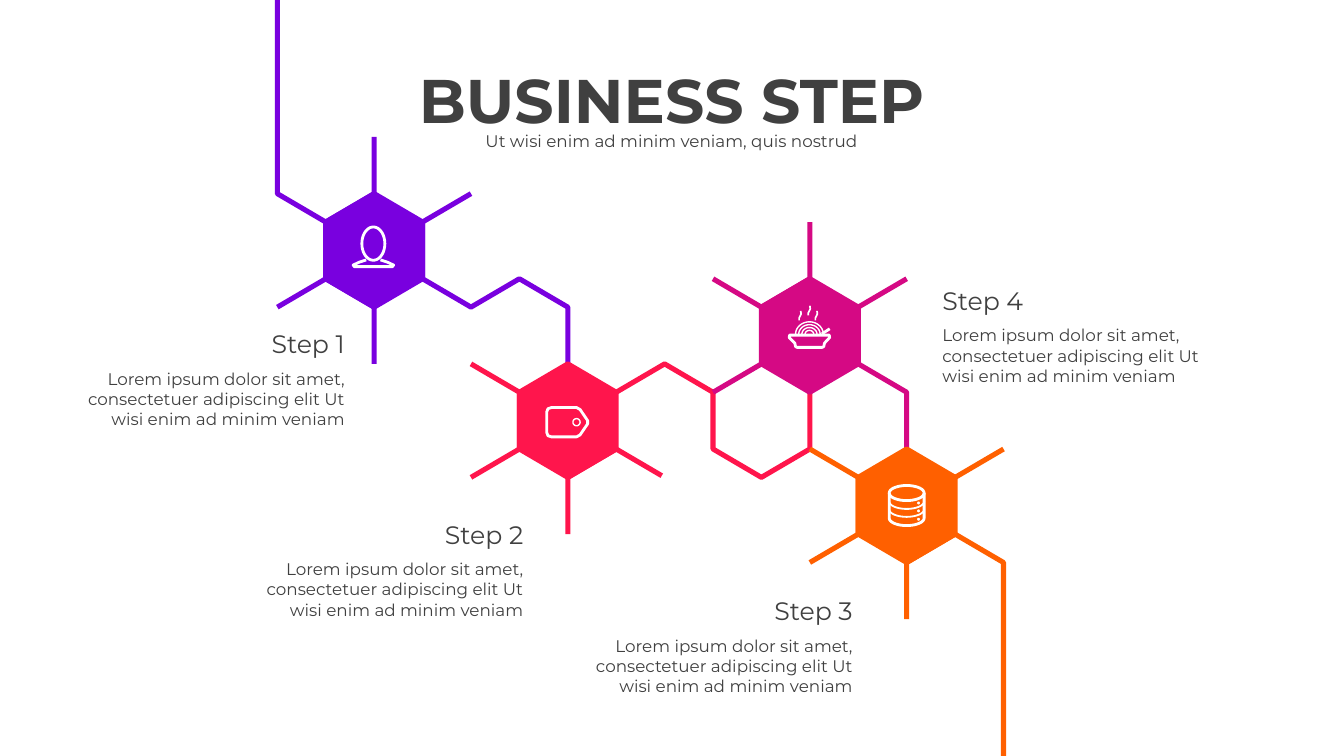
from dataclasses import dataclass
from math import cos, pi, sin
from typing import Optional

from lxml import etree
from pptx import Presentation
from pptx.dml.color import RGBColor
from pptx.enum.shapes import MSO_CONNECTOR
from pptx.enum.text import MSO_ANCHOR, PP_ALIGN
from pptx.oxml.ns import qn
from pptx.util import Cm, Pt

LEFT, CENTER, RIGHT = PP_ALIGN.LEFT, PP_ALIGN.CENTER, PP_ALIGN.RIGHT
TOP, MIDDLE = MSO_ANCHOR.TOP, MSO_ANCHOR.MIDDLE
STRAIGHT = MSO_CONNECTOR.STRAIGHT

FONT = "Montserrat"
COLORS = {"violet": "7900DF", "red": "FF154C", "magenta": "D50984",
          "orange": "FF6000", "white": "FFFFFF", "text": "404040"}
LOREM = ("Lorem ipsum dolor sit amet, consectetuer adipiscing elit "
         "Ut wisi enim ad minim veniam")

# Honeycomb lattice in cm: every corner sits on a whole column and row
SLIDE_W, SLIDE_H = 33.87, 19.05
GRID_LEFT, GRID_TOP = 6.99, 4.88
COL, ROW = 1.22, 1.43 / 2
ROW_SLIDE_TOP = -GRID_TOP / ROW
ROW_SLIDE_BOTTOM = (SLIDE_H - GRID_TOP) / ROW
TRAIL_PT = 3.63

Points = list[tuple[float, float]]


@dataclass
class Stroke:
    """Icon line, in cm from the centre of its hexagon."""
    points: Points
    width: float = 2.0
    closed: bool = False
    fill: Optional[str] = None


@dataclass
class Step:
    title: str
    color: str
    center: tuple[int, int]
    trails: list[Points]
    icon: list[Stroke]
    text_left: float
    text_top: float
    align: PP_ALIGN = RIGHT


def arc(cx: float, cy: float, rx: float, ry: float,
        start: float = 0, end: float = 2 * pi, parts: int = 36) -> Points:
    angles = [start + (end - start) * i / parts for i in range(parts + 1)]
    return [(cx + rx * cos(a), cy + ry * sin(a)) for a in angles]


def rgb(name: str) -> RGBColor:
    return RGBColor.from_string(COLORS[name])


def node(point: tuple[float, float]) -> tuple[float, float]:
    """Turn a lattice column and row into cm."""
    return GRID_LEFT + point[0] * COL, GRID_TOP + point[1] * ROW


def add_path(shapes, points: Points, color: str, width: float,
             closed: bool = False, fill: Optional[str] = None) -> None:
    pts = [(Cm(x), Cm(y)) for x, y in points]
    if len(pts) == 2:
        sp = shapes.add_connector(STRAIGHT, *pts[0], *pts[1])
        etree.SubElement(sp._element.spPr, qn("a:effectLst"))
    else:
        builder = shapes.build_freeform(*pts[0], scale=1.0)
        builder.add_line_segments(pts[1:], close=closed)
        sp = builder.convert_to_shape()
        sp.shadow.inherit = False
        if fill:
            sp.fill.solid()
            sp.fill.fore_color.rgb = rgb(fill)
        else:
            sp.fill.background()
    sp.line.color.rgb = rgb(color)
    sp.line.width = Pt(width)


def add_text(shapes, text: str, left: float, top: float, width: float,
             height: float, size: float, align: PP_ALIGN,
             anchor: MSO_ANCHOR = TOP, bold: bool = False,
             spacing: float = 1.0) -> None:
    tf = shapes.add_textbox(Cm(left), Cm(top), Cm(width), Cm(height)).text_frame
    tf.word_wrap = True
    tf.vertical_anchor = anchor
    tf.text = text
    p = tf.paragraphs[0]
    p.alignment = align
    p.line_spacing = spacing
    font = p.runs[0].font
    font.name, font.size, font.bold = FONT, Pt(size), bold
    font.color.rgb = rgb("text")


def draw_step(shapes, step: Step) -> None:
    for trail in step.trails:
        add_path(shapes, [node(pt) for pt in trail], step.color, TRAIL_PT)

    c, r = step.center
    corners = [(c, r - 2), (c + 1, r - 1), (c + 1, r + 1),
               (c, r + 2), (c - 1, r + 1), (c - 1, r - 1)]
    add_path(shapes, [node(pt) for pt in corners], step.color, TRAIL_PT,
             closed=True, fill=step.color)

    cx, cy = node(step.center)
    for s in step.icon:
        add_path(shapes, [(cx + x, cy + y) for x, y in s.points],
                 "white", s.width, s.closed, s.fill)

    body_w, title_w = 7.01, 5.05
    indent = body_w - title_w if step.align == RIGHT else 0
    add_text(shapes, LOREM, step.text_left, step.text_top + 1.01,
             body_w, 1.8, 12, step.align)
    add_text(shapes, step.title, step.text_left + indent, step.text_top,
             title_w, 1.02, 18, step.align, MIDDLE)


PERSON = [
    Stroke(arc(-0.02, -0.17, 0.29, 0.42), closed=True),
    Stroke([(-0.2, 0.24), (-0.38, 0.3), (-0.53, 0.37), (-0.5, 0.41),
            (0.46, 0.41), (0.49, 0.37), (0.34, 0.3), (0.16, 0.24)]),
]
TAG = [
    Stroke([(-0.41, -0.33), (0.22, -0.33), (0.31, -0.28), (0.5, 0),
            (0.5, 0.08), (0.31, 0.36), (0.22, 0.41), (-0.41, 0.41),
            (-0.5, 0.38), (-0.53, 0.3), (-0.53, -0.22), (-0.5, -0.3)],
           closed=True),
    Stroke(arc(0.22, 0.04, 0.09, 0.09), 1, closed=True),
]
BOWL = [
    Stroke([(-0.51, -0.01), (-0.52, 0.05), (-0.38, 0.19), (-0.36, 0.28),
            (-0.32, 0.3), (0.31, 0.3), (0.35, 0.28), (0.37, 0.19),
            (0.5, 0.05), (0.49, -0.01)], closed=True),
    Stroke([(0.3, -0.04), (0.5, -0.17)]),
    *[Stroke(arc(-0.01, -0.03, radius, 0.9 * radius, pi, 2 * pi), 1)
      for radius in (0.35, 0.27, 0.19, 0.11)],
    *[Stroke([(x, y), (x, y - 0.06), (x + 0.05, y - 0.16),
              (x + 0.04, y - 0.24)], 1.2)
      for x, y in ((-0.27, -0.38), (-0.04, -0.51), (0.14, -0.38))],
]
DATABASE = [
    Stroke(arc(0, -0.32, 0.44, 0.19), closed=True),
    Stroke([(0.44, -0.32), *arc(0, 0.31, 0.44, 0.19, 0, pi), (-0.44, -0.32)]),
    *[Stroke(arc(0, y, 0.44, 0.19, 0, pi), 1.3) for y in (-0.11, 0.09)],
    *[Stroke(arc(0.3, y, 0.03, 0.03), 0.25, closed=True, fill="white")
      for y in (-0.07, 0.13, 0.34)],
]

STEPS = [
    Step("Step 1", "violet", (2, 2), [
        [(0, ROW_SLIDE_TOP), (0, 0), (1, 1), (2, 0), (2, -2)],
        [(4, 0), (3, 1), (3, 3), (4, 4), (5, 3), (6, 4), (6, 6)],
        [(0, 4), (1, 3), (2, 4), (2, 6)],
    ], PERSON, 1.93, 8.15),
    Step("Step 2", "red", (6, 8), [
        [(7, 7), (8, 6), (9, 7), (9, 9), (10, 10), (11, 9), (11, 7)],
        [(4, 6), (5, 7), (5, 9), (4, 10)],
        [(6, 12), (6, 10), (7, 9), (7.94, 9.94)],
    ], TAG, 6.43, 12.95),
    Step("Step 4", "magenta", (11, 5), [
        [(9, 7), (10, 6)],
        [(9, 3), (10, 4), (11, 3), (11, 1)],
        [(13, 3), (12, 4), (12, 6), (13, 7), (13, 9)],
    ], BOWL, 23.5, 7.06, LEFT),
    Step("Step 3", "orange", (13, 11), [
        [(11, 9), (12, 10), (12, 12), (11, 13)],
        [(13, 15), (13, 13), (14, 12), (15, 13), (15, ROW_SLIDE_BOTTOM)],
        [(14, 10), (15, 9)],
    ], DATABASE, 14.73, 14.88),
]


def main() -> None:
    prs = Presentation()
    prs.slide_width, prs.slide_height = Cm(SLIDE_W), Cm(SLIDE_H)
    shapes = prs.slides.add_slide(prs.slide_layouts[6]).shapes
    for step in STEPS:
        draw_step(shapes, step)
    add_text(shapes, "BUSINESS STEP", 1.93, 1.64, 30, 1.85, 44, CENTER,
             bold=True, spacing=0.9)
    add_text(shapes, "Ut wisi enim ad minim veniam, quis nostrud",
             4.72, 3.25, 24.41, 0.66, 12, CENTER, MIDDLE, spacing=0.9)
    prs.save("out.pptx")


if __name__ == "__main__":
    main()
